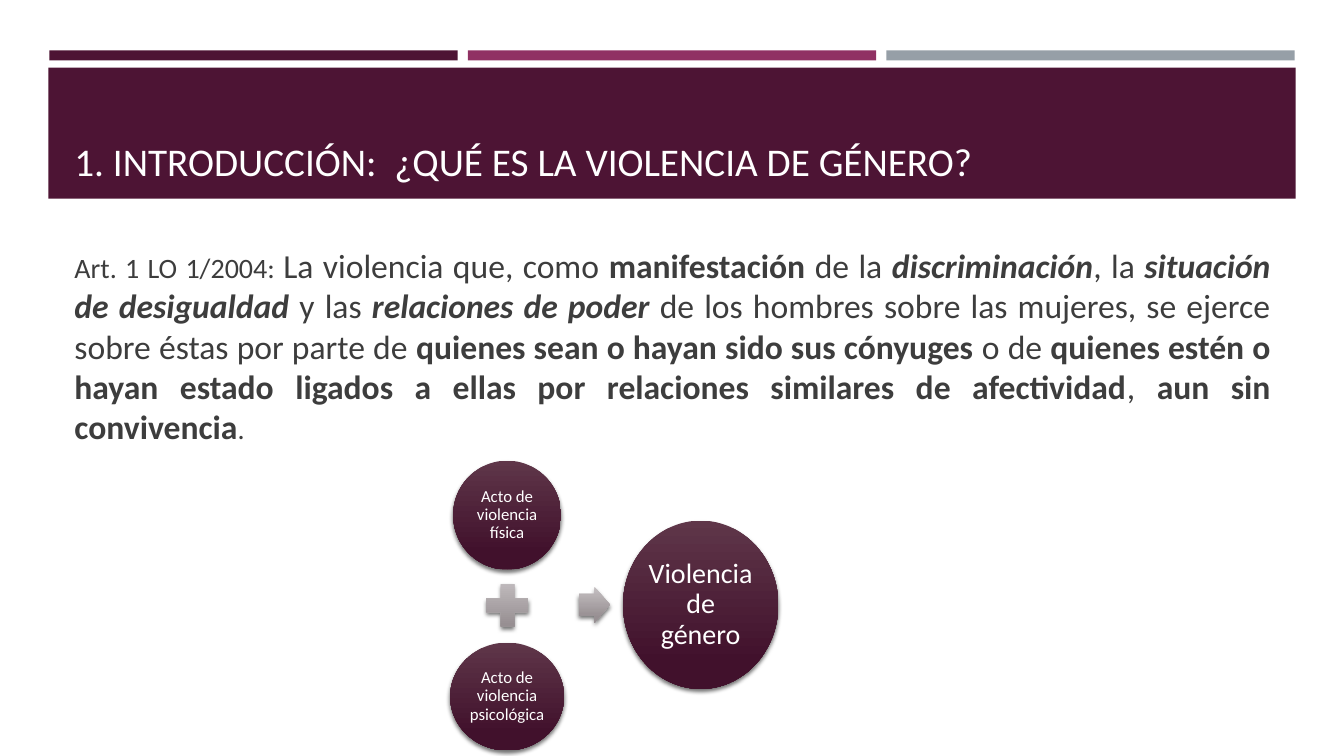
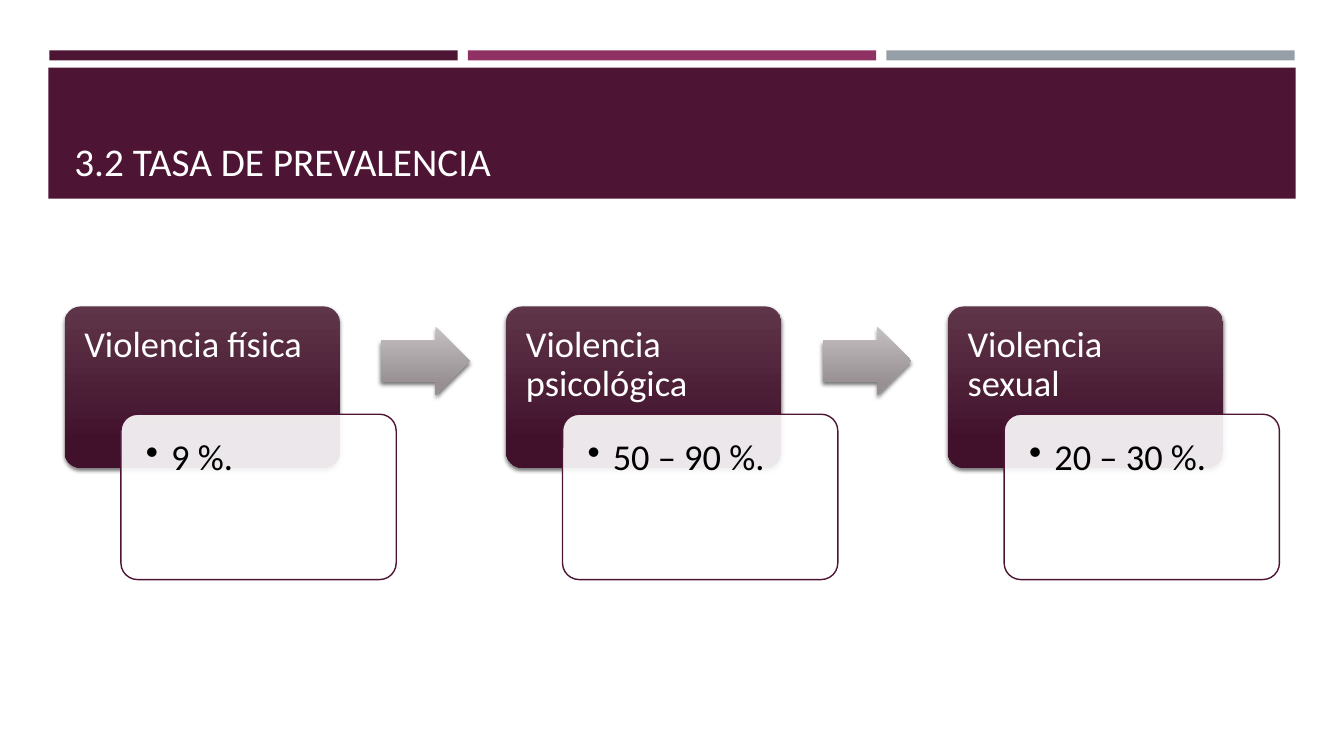
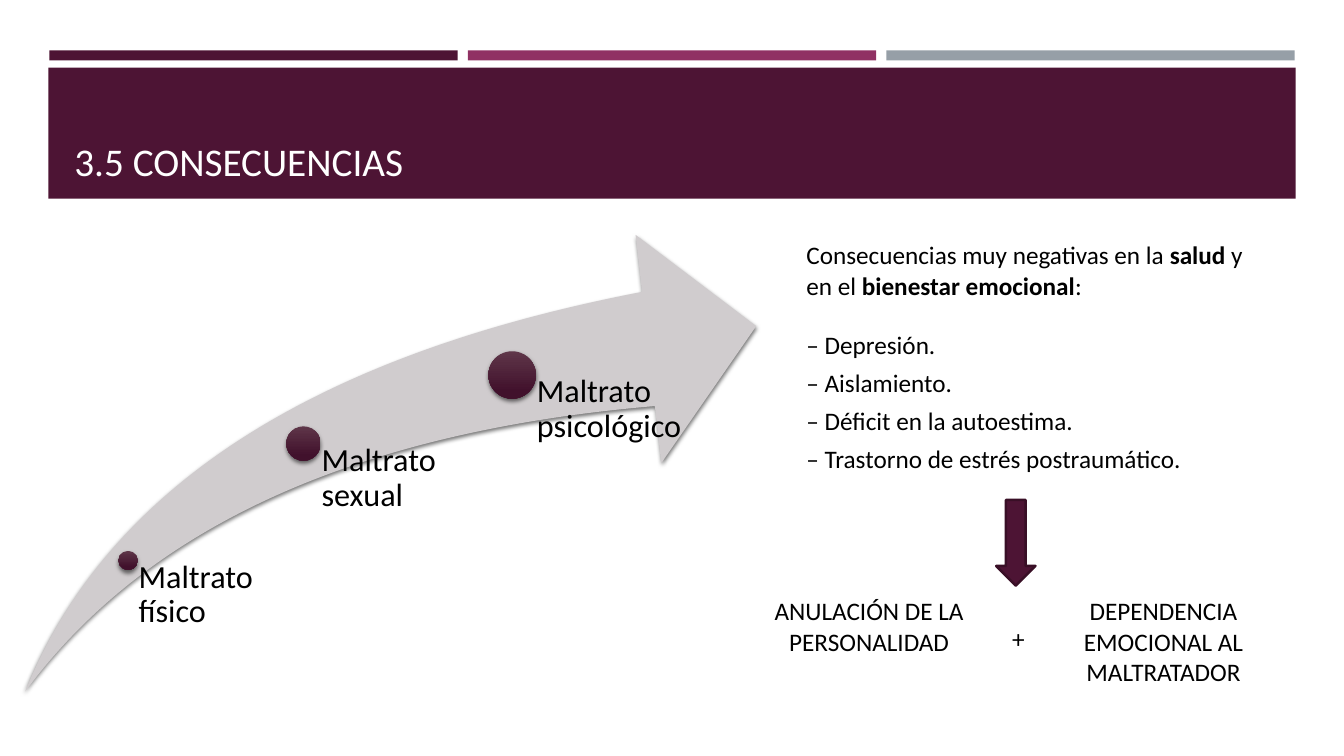
from lxml.etree import SubElement
from pptx import Presentation
from pptx.dml.color import RGBColor
from pptx.enum.shapes import MSO_SHAPE as Preset
from pptx.enum.text import MSO_ANCHOR as Anchor, PP_ALIGN as Align
from pptx.oxml.ns import qn
from pptx.util import Inches, Pt

PLUM = RGBColor(0x4D, 0x14, 0x34)
MAGENTA = RGBColor(0x90, 0x31, 0x63)
STEEL = RGBColor(0x96, 0x9F, 0xA7)
PLUM_LIGHT = RGBColor(0x5F, 0x36, 0x49)
PLUM_DARK = RGBColor(0x41, 0x11, 0x2C)
PLUM_EDGE = RGBColor(0x39, 0x0F, 0x26)
GREY_LIGHT = RGBColor(0xC5, 0xC0, 0xC2)
GREY_DARK = RGBColor(0x97, 0x8F, 0x92)
SWOOSH_GREY = RGBColor(0xD0, 0xCC, 0xCE)
TEXT_GREY = RGBColor(0x3D, 0x3D, 0x3D)
BLACK = RGBColor(0, 0, 0)
WHITE = RGBColor(0xFF, 0xFF, 0xFF)

PLUM_SHADE = (PLUM_LIGHT, PLUM_DARK)
GREY_SHADE = (GREY_LIGHT, GREY_DARK)
FONT = "Calibri"
WIDTH, HEIGHT = 13.33, 7.5
MARGIN = 0.64
CONTENT_WIDTH = 12.06
BOLD = {"bold": True}
BOLD_ITALIC = {"bold": True, "italic": True}


def write_text(holder, *runs, size=18, color=BLACK, align=Align.LEFT,
               anchor=Anchor.TOP, insets=(0.1, 0.05, 0.1, 0.05),
               line=1.0, before=0, bullet=None):
    frame = holder.text_frame
    frame.word_wrap = True
    frame.vertical_anchor = anchor
    (frame.margin_left, frame.margin_top,
     frame.margin_right, frame.margin_bottom) = map(Inches, insets)
    paragraph = frame.add_paragraph() if frame.text else frame.paragraphs[0]
    paragraph.alignment = align
    paragraph.line_spacing = line
    paragraph.space_before = Pt(before)
    if bullet:
        props = paragraph._p.get_or_add_pPr()
        props.set("marL", str(Inches(0.25)))
        props.set("indent", str(-Inches(0.25)))
        SubElement(props, qn("a:buChar"), char=bullet)
    for part in runs:
        words, style = (part, {}) if isinstance(part, str) else part
        run = paragraph.add_run()
        run.text = words
        run.font.name = FONT
        run.font.size = Pt(style.get("size", size))
        run.font.bold = style.get("bold", False)
        run.font.italic = style.get("italic", False)
        run.font.color.rgb = color


def add_box(slide, left, top, width, height):
    return slide.shapes.add_textbox(*map(Inches, (left, top, width, height)))


def add_figure(slide, preset, left, top, width, height, fill,
               adjust=(), line=None, line_width=1, opacity=None, shadow=False):
    figure = slide.shapes.add_shape(
        preset, *map(Inches, (left, top, width, height)))
    for index, value in enumerate(adjust):
        figure.adjustments[index] = value
    if isinstance(fill, RGBColor):
        figure.fill.solid()
        figure.fill.fore_color.rgb = fill
    else:
        figure.fill.gradient()
        figure.fill.gradient_angle = 270
        for stop, shade, position in zip(
                figure.fill.gradient_stops, fill, (0, 0.84)):
            stop.color.rgb = shade
            stop.position = position
    if opacity:
        tint = figure._element.spPr.find(qn("a:solidFill"))[0]
        SubElement(tint, qn("a:alpha"), val=str(opacity * 1000))
    if line is None:
        figure.line.fill.background()
    else:
        figure.line.color.rgb = line
        figure.line.width = Pt(line_width)
    figure.shadow.inherit = False
    if shadow:
        effects = figure._element.spPr.find(qn("a:effectLst"))
        outer = SubElement(effects, qn("a:outerShdw"), blurRad=str(Pt(3)),
                           dist=str(Pt(2)), dir="5400000", rotWithShape="0")
        tint = SubElement(outer, qn("a:srgbClr"), val="000000")
        SubElement(tint, qn("a:alpha"), val="55000")
    return figure


def add_circle(slide, center_x, center_y, width, height):
    return add_figure(slide, Preset.OVAL, center_x - width / 2,
                      center_y - height / 2, width, height,
                      PLUM_SHADE, shadow=True)


def add_titled_slide(deck, title):
    slide = deck.slides.add_slide(deck.slide_layouts[6])
    for column, color in enumerate((PLUM, MAGENTA, STEEL)):
        add_figure(slide, Preset.RECTANGLE, 0.49 + column * 4.15, 0.5,
                   4.05, 0.1, color)
    add_figure(slide, Preset.RECTANGLE, 0.48, 0.67, 12.37, 1.3, PLUM)
    write_text(add_box(slide, MARGIN, 0.77, CONTENT_WIDTH, 1.11), title,
               size=28, color=WHITE, anchor=Anchor.BOTTOM)
    return slide


def build_introduction(deck):
    slide = add_titled_slide(
        deck, "1. INTRODUCCIÓN:  ¿QUÉ ES LA VIOLENCIA DE GÉNERO?")
    write_text(
        add_box(slide, MARGIN, 2.38, CONTENT_WIDTH, 2.15),
        ("Art. 1 LO 1/2004: ", {"size": 20}),
        "La violencia que, como ", ("manifestación", BOLD), " de la ",
        ("discriminación", BOLD_ITALIC), ", la ",
        ("situación de desigualdad ", BOLD_ITALIC), "y las ",
        ("relaciones de poder ", BOLD_ITALIC),
        "de los hombres sobre las mujeres, se ejerce sobre éstas por parte de ",
        ("quienes sean o hayan sido sus cónyuges ", BOLD), "o de ",
        ("quienes estén o hayan estado ligados a ellas por relaciones "
         "similares de afectividad", BOLD), ", ",
        ("aun sin convivencia", BOLD), (".", {"size": 20}),
        size=24, color=TEXT_GREY, align=Align.JUSTIFY)

    acts_x, middle_y = 5.03, 6.0
    for center_x, center_y, width, height, label, size in (
            (acts_x, 5.11, 1.07, 1.08, "Acto de violencia física", 12),
            (acts_x, 6.91, 1.13, 1.07, "Acto de violencia psicológica", 12),
            (6.95, middle_y, 1.54, 1.67, "Violencia de género", 20)):
        write_text(add_circle(slide, center_x, center_y, width, height),
                   label, size=size, color=WHITE, align=Align.CENTER,
                   anchor=Anchor.MIDDLE, insets=(0.02,) * 4, line=0.9)
    add_figure(slide, Preset.MATH_PLUS, acts_x - 0.28, middle_y - 0.28,
               0.57, 0.57, GREY_SHADE, shadow=True)
    add_figure(slide, Preset.RIGHT_ARROW, 5.74, middle_y - 0.18, 0.31, 0.36,
               GREY_SHADE, adjust=(0.6, 0.5), shadow=True)


def build_prevalence(deck):
    slide = add_titled_slide(deck, "3.2 TASA DE PREVALENCIA")
    rates = (("Violencia física", "9 %."),
             ("Violencia psicológica", "50 – 90 %."),
             ("Violencia sexual", "20 – 30 %."))
    step, card_width = 4.38, 2.73
    for column, (violence, rate) in enumerate(rates):
        left = MARGIN + column * step
        heading = add_figure(slide, Preset.ROUNDED_RECTANGLE, left, 3.04,
                             card_width, 1.6, PLUM_SHADE, adjust=(0.1,),
                             shadow=True)
        write_text(heading, violence, size=26, color=WHITE, line=0.9,
                   insets=(0.15, 0.15, 0.15, 0.11))
        card = add_figure(slide, Preset.ROUNDED_RECTANGLE, left + 0.56, 4.11,
                          card_width, 1.64, WHITE, adjust=(0.1,),
                          line=PLUM, opacity=90)
        write_text(card, rate, size=26, line=0.9, insets=(0.2,) * 4,
                   bullet="•")
        if column < len(rates) - 1:
            add_figure(slide, Preset.RIGHT_ARROW, left + 3.14, 3.24,
                       0.88, 0.68, GREY_SHADE, adjust=(0.6, 0.5), shadow=True)


def build_consequences(deck):
    slide = add_titled_slide(deck, "3.5 CONSECUENCIAS")
    swoosh_bottom = 6.86
    add_figure(slide, Preset.SWOOSH_ARROW, 0.25, 2.33, 7.25, 4.53,
               SWOOSH_GREY, adjust=(0.25, 0.25), shadow=True)
    for x, y, diameter, abuse in ((1.27, 5.56, 0.19, "Maltrato físico"),
                                  (3.01, 4.4, 0.34, "Maltrato sexual"),
                                  (5.08, 3.72, 0.47, "Maltrato psicológico")):
        add_circle(slide, x, y, diameter, diameter)
        write_text(add_box(slide, x, y, 1.74, swoosh_bottom - y), abuse,
                   size=23, line=0.9, insets=(diameter / 2 + 0.01, 0, 0, 0))

    effects = add_box(slide, 7.9, 2.33, 4.8, 2.47)
    write_text(effects, "Consecuencias muy negativas en la ",
               ("salud ", BOLD), "y en el ", ("bienestar emocional", BOLD), ":")
    for row, effect in enumerate(("Depresión.", "Aislamiento.",
                                  "Déficit en la autoestima.",
                                  "Trastorno de estrés postraumático.")):
        write_text(effects, f"– {effect}", before=5.5 if row else 21)

    add_figure(slide, Preset.DOWN_ARROW, 9.88, 4.96, 0.39, 0.85, PLUM,
               line=PLUM_EDGE, line_width=1.75)
    for left, top, width, height, outcome in (
            (7.51, 5.86, 2.22, 1.01, "ANULACIÓN DE LA PERSONALIDAD"),
            (9.9, 6.13, 0.4, 0.4, "+"),
            (10.43, 5.86, 2.22, 1.01, "DEPENDENCIA EMOCIONAL AL MALTRATADOR")):
        write_text(add_box(slide, left, top, width, height), outcome,
                   align=Align.CENTER)


def main():
    deck = Presentation()
    deck.slide_width, deck.slide_height = Inches(WIDTH), Inches(HEIGHT)
    build_introduction(deck)
    build_prevalence(deck)
    build_consequences(deck)
    deck.save("out.pptx")


if __name__ == "__main__":
    main()
